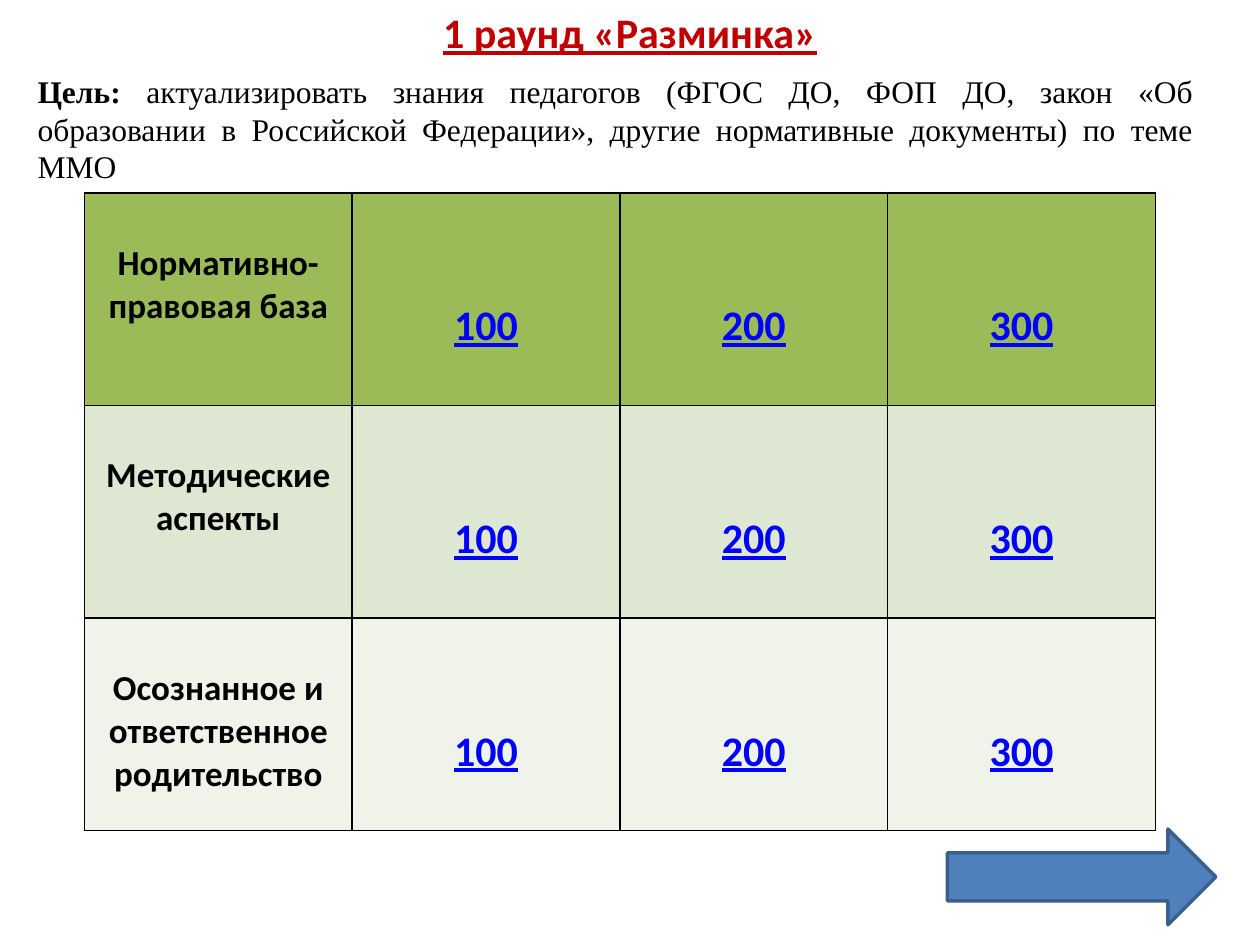
from lxml import etree
from pptx import Presentation
from pptx.dml.color import RGBColor
from pptx.enum.shapes import MSO_SHAPE
from pptx.enum.text import MSO_ANCHOR, MSO_AUTO_SIZE, PP_ALIGN
from pptx.oxml.ns import qn
from pptx.util import Inches, Pt

CENTER, JUSTIFY = PP_ALIGN.CENTER, PP_ALIGN.JUSTIFY
TOP = MSO_ANCHOR.TOP
NO_AUTOFIT = MSO_AUTO_SIZE.NONE
RIGHT_ARROW = MSO_SHAPE.RIGHT_ARROW

COLORS = {
    "title": "C00000",
    "text": "000000",
    "points": "0000FF",
    "border": "000000",
    "arrow": "4F81BD",
    "arrow_edge": "3A5F8C",
}
TOPICS = [
    ("Нормативно-правовая база", "9BBB59"),
    ("Методические аспекты", "DEE7D1"),
    ("Осознанное и ответственное родительство", "EFF3EA"),
]
POINTS = ["100", "200", "300"]
GOAL = (
    "актуализировать знания педагогов (ФГОС ДО, ФОП ДО, закон "
    "«Об образовании в Российской Федерации», другие нормативные документы) "
    "по теме ММО"
)


def rgb(name):
    return RGBColor.from_string(COLORS.get(name, name))


def write(paragraph, text, size=24, font="Calibri", color="text",
          bold=True, underline=False, align=CENTER):
    paragraph.alignment = align
    run = paragraph.add_run()
    run.text = text
    run.font.size = Pt(size)
    run.font.name = font
    run.font.bold = bold
    run.font.underline = underline
    run.font.color.rgb = rgb(color)


def place(shape, left, top, width, height):
    shape.left, shape.top = Inches(left), Inches(top)
    shape.width, shape.height = Inches(width), Inches(height)


def add_heading(slide):
    heading = slide.shapes.title
    place(heading, 0, 0, 10, 0.5)
    frame = heading.text_frame
    frame.auto_size = NO_AUTOFIT
    frame.vertical_anchor = TOP
    write(frame.paragraphs[0], "1 раунд «Разминка»", color="title", underline=True)


def add_goal(slide):
    goal = slide.shapes.add_textbox(
        Inches(0.2), Inches(0.52), Inches(9.37), Inches(1.01))
    goal.text_frame.word_wrap = True
    paragraph = goal.text_frame.paragraphs[0]
    for text, bold in (("Цель: ", True), (GOAL, False)):
        write(paragraph, text, size=18, font="Times New Roman",
              bold=bold, align=JUSTIFY)


def add_next_arrow(slide):
    arrow = slide.shapes.add_shape(
        RIGHT_ARROW, Inches(7.52), Inches(6.58), Inches(2.13), Inches(0.76))
    arrow.shadow.inherit = False
    arrow.fill.solid()
    arrow.fill.fore_color.rgb = rgb("arrow")
    arrow.line.color.rgb = rgb("arrow_edge")
    arrow.line.width = Pt(2)


def add_borders(cell):
    properties = cell._tc.get_or_add_tcPr()
    for position, side in enumerate(("a:lnL", "a:lnR", "a:lnT", "a:lnB")):
        border = etree.Element(qn(side), w=str(Pt(1)))
        fill = etree.SubElement(border, qn("a:solidFill"))
        etree.SubElement(fill, qn("a:srgbClr"), val=COLORS["border"])
        properties.insert(position, border)


def fill_cell(cell, text, background, margin_top, **text_format):
    cell.fill.solid()
    cell.fill.fore_color.rgb = rgb(background)
    cell.margin_top = Inches(margin_top)
    add_borders(cell)
    write(cell.text_frame.paragraphs[0], text, **text_format)


def add_question_board(slide):
    board = slide.shapes.add_table(
        len(TOPICS), len(POINTS) + 1,
        Inches(0.67), Inches(1.53), Inches(8.5), Inches(5.06)).table
    for row, (topic, background) in enumerate(TOPICS):
        fill_cell(board.cell(row, 0), topic, background, 0.39, size=20)
        for column, points in enumerate(POINTS, start=1):
            fill_cell(board.cell(row, column), points, background, 0.86,
                      color="points", underline=True)


def main():
    presentation = Presentation()
    presentation.slide_width = Inches(10)
    presentation.slide_height = Inches(7.5)
    slide = presentation.slides.add_slide(presentation.slide_layouts[5])
    add_next_arrow(slide)
    add_heading(slide)
    add_goal(slide)
    add_question_board(slide)
    presentation.save("out.pptx")


if __name__ == "__main__":
    main()
